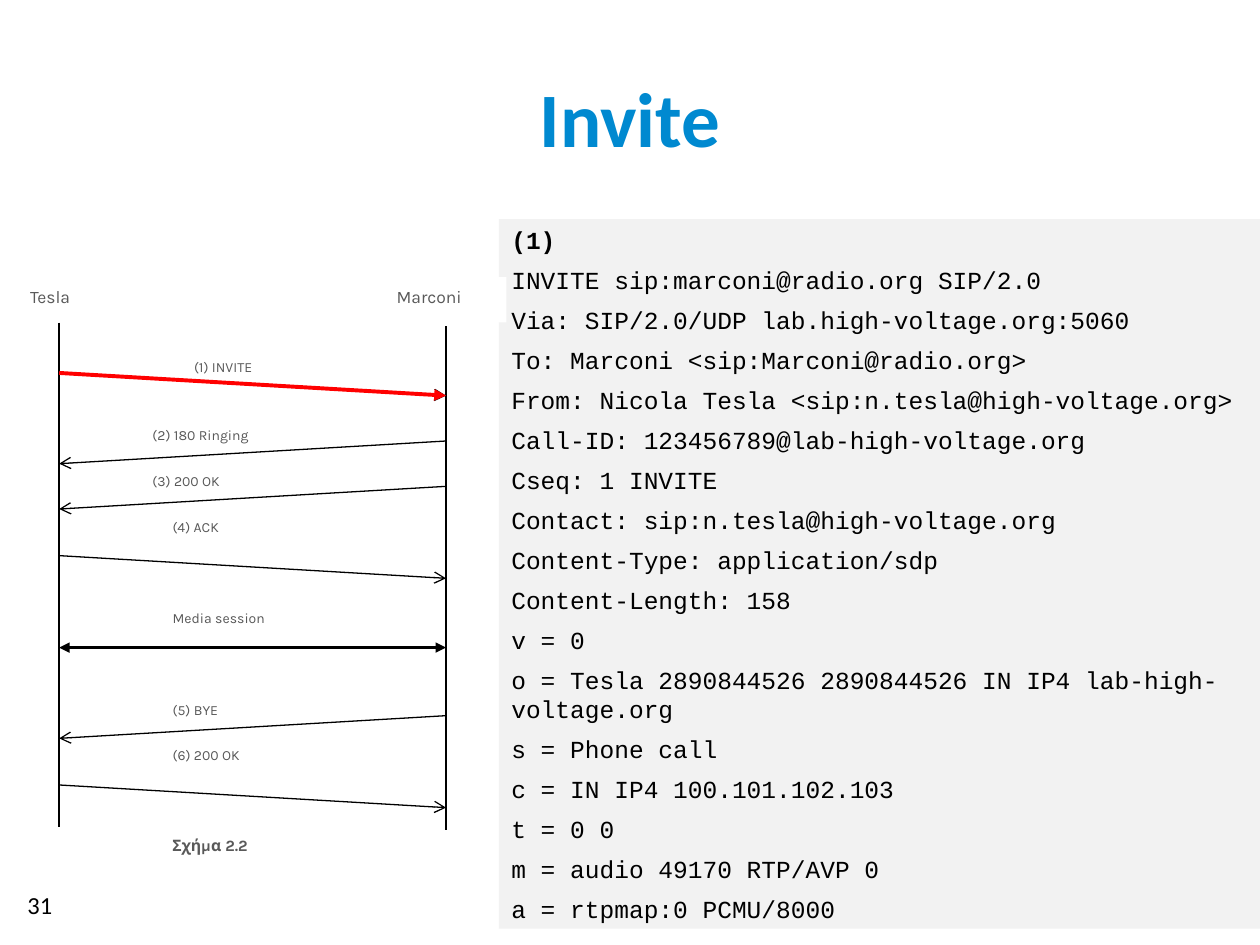
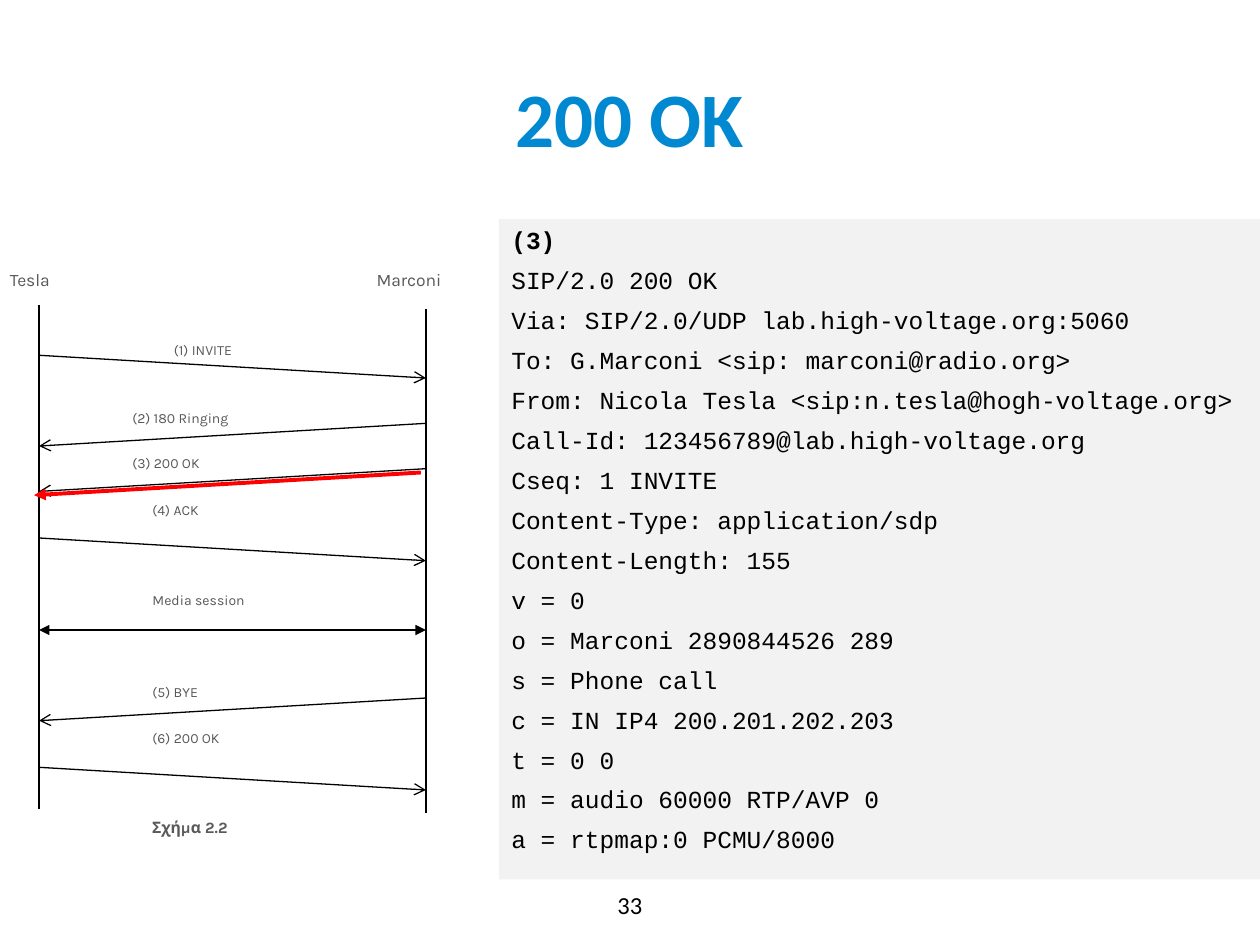
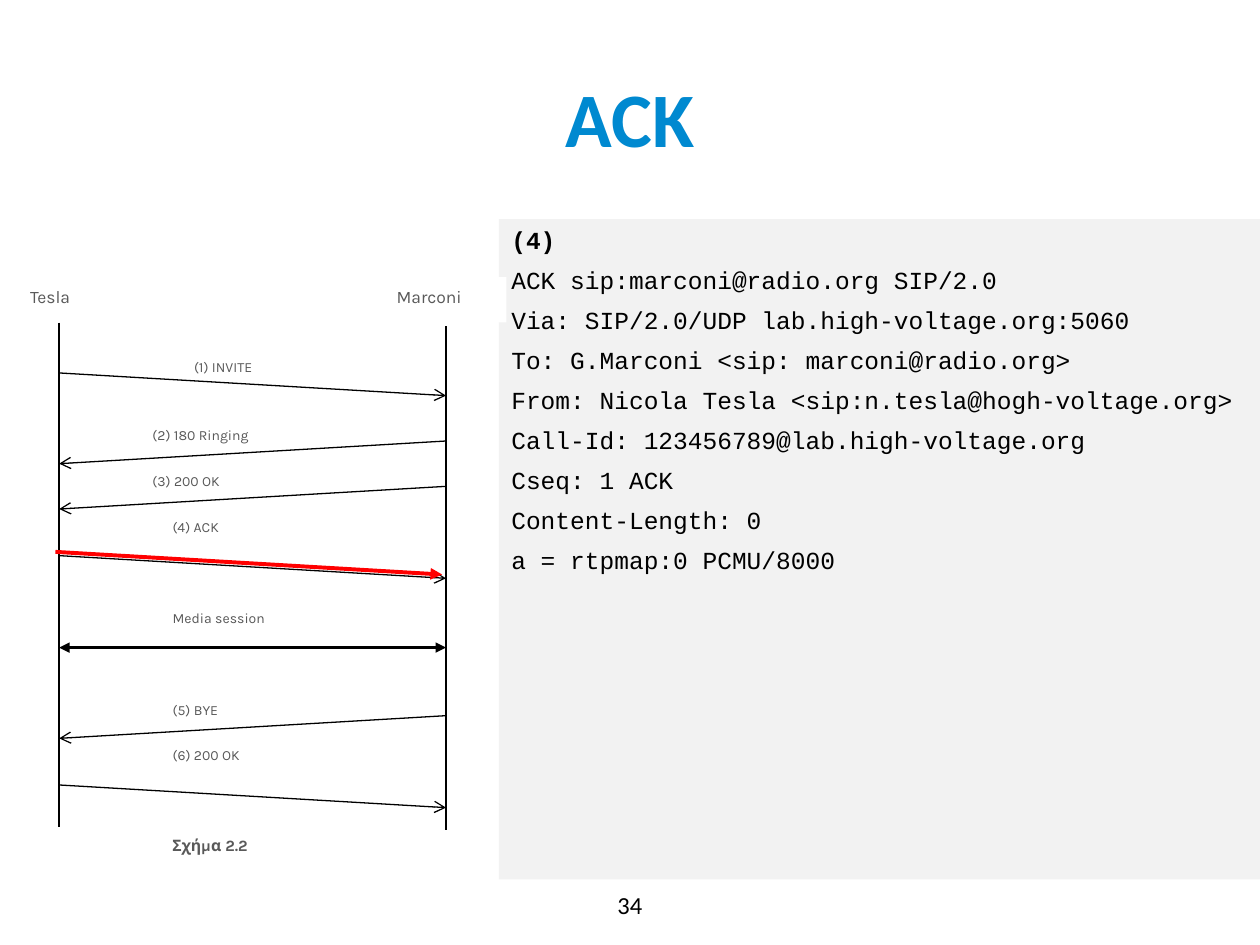
from pptx import Presentation
from pptx.dml.color import RGBColor
from pptx.enum import shapes, text
from pptx.oxml import parse_xml
from pptx.oxml.ns import nsdecls
from pptx.util import Inches, Pt

HUES = {"title": "0089D0", "panel": "F2F2F2", "white": "FFFFFF",
        "ink": "000000", "label": "595959", "hot": "FF0000"}
LEFT, MID = text.PP_ALIGN.LEFT, text.PP_ALIGN.CENTER
TOP, HALF = text.MSO_ANCHOR.TOP, text.MSO_ANCHOR.MIDDLE

PAGES = [
    {"title": "Invite", "page": "31", "align": LEFT, "tall": 5.63,
     "shift": (0, 0), "hot": (0, 0, 0), "lines": [
         "(1)",
         "INVITE sip:marconi@radio.org SIP/2.0",
         "Via: SIP/2.0/UDP lab.high-voltage.org:5060",
         "To: Marconi <sip:Marconi@radio.org>",
         "From: Nicola Tesla <sip:n.tesla@high-voltage.org>",
         "Call-ID: 123456789@lab-high-voltage.org",
         "Cseq: 1 INVITE",
         "Contact: sip:n.tesla@high-voltage.org",
         "Content-Type: application/sdp",
         "Content-Length: 158",
         "v = 0",
         "o = Τesla 2890844526 2890844526 IN IP4 lab-high-voltage.org",
         "s = Phone call",
         "c = IN IP4 100.101.102.103",
         "t = 0 0",
         "m = audio 49170 RTP/AVP 0",
         "a = rtpmap:0 PCMU/8000"]},
    {"title": "200 OK", "page": "33", "align": MID, "tall": 5.24,
     "shift": (-0.16, -0.14), "hot": (2, -0.04, 0.03), "lines": [
         "(3)",
         "SIP/2.0 200 ΟΚ",
         "Via: SIP/2.0/UDP lab.high-voltage.org:5060",
         "To: G.Marconi <sip: marconi@radio.org>",
         "From: Nicola Tesla <sip:n.tesla@hogh-voltage.org>",
         "Call-Id: 123456789@lab.high-voltage.org",
         "Cseq: 1 INVITE",
         "Content-Type: application/sdp",
         "Content-Length: 155",
         "v = 0",
         "o = Marconi 2890844526 289",
         "s = Phone call",
         "c = IN IP4 200.201.202.203",
         "t = 0 0",
         "m = audio 60000 RTP/AVP 0",
         "a = rtpmap:0 PCMU/8000"]},
    {"title": "ACK", "page": "34", "align": MID, "tall": 5.24,
     "shift": (0, 0), "hot": (3, -0.03, -0.03), "lines": [
         "(4)",
         "ACK sip:marconi@radio.org SIP/2.0",
         "Via: SIP/2.0/UDP lab.high-voltage.org:5060",
         "To: G.Marconi <sip: marconi@radio.org>",
         "From: Nicola Tesla <sip:n.tesla@hogh-voltage.org>",
         "Call-Id: 123456789@lab.high-voltage.org",
         "Cseq: 1 ACK",
         "Content-Length: 0",
         "a = rtpmap:0 PCMU/8000"]},
]

NAMES = [("Tesla", 0.14, 0.81), ("Marconi", 3.05, 0.97)]
LABELS = [("(6) 200 OK", 1.11, 5.86, 1.62), ("(5) BYE", 1.11, 5.5, 1.62),
          ("Media session", 1.11, 4.77, 1.62), ("(4) ACK", 1.11, 4.05, 1.13),
          ("(3) 200 OK", 0.95, 3.68, 1.62), ("(2) 180 Ringing", 0.95, 3.32, 1.62),
          ("(1) INVITE", 1.28, 2.78, 1.62)]
CALLER, CALLEE, DROP, ROW = 0.47, 3.54, 0.18, 0.36
STEPS = [(2.96, True), (3.5, False), (3.86, False),
         (4.41, True), (5.68, False), (6.23, True)]

FONTS = {
    "title": {"name": "Calibri", "size": Pt(44), "bold": True},
    "code": {"name": "Courier New", "size": Pt(14), "bold": False},
    "page": {"name": "Calibri", "size": Pt(14)},
    "name": {"name": "Karla", "size": Pt(10)},
    "label": {"name": "Karla", "size": Pt(8)},
    "figure": {"name": "Karla", "size": Pt(9), "bold": True},
}
LABEL = {"line_spacing": 1.15, "space_after": Pt(10), "alignment": LEFT}
CODE = {"line_spacing": 1.0, "space_after": Pt(6), "alignment": LEFT}


def rgb(hue):
    return RGBColor.from_string(HUES[hue])


def put(obj, vals):
    for key, val in vals.items():
        setattr(obj, key, val)


def place(obj, *box):
    put(obj, dict(zip(("left", "top", "width", "height"), map(Inches, box))))


def write(shape, lines, font, hue, para, anchor=TOP):
    frame = shape.text_frame
    put(frame, {"word_wrap": True, "vertical_anchor": anchor})
    for i, line in enumerate(lines):
        p = frame.add_paragraph() if i else frame.paragraphs[0]
        put(p, para)
        run = p.add_run()
        run.text = line
        put(run.font, FONTS[font])
        run.font.color.rgb = rgb(hue)


def block(slide, box, hue):
    shape = slide.shapes.add_shape(shapes.MSO_SHAPE.RECTANGLE, *map(Inches, box))
    shape.shadow.inherit = False
    shape.fill.solid()
    shape.fill.fore_color.rgb = rgb(hue)
    shape.line.fill.background()
    return shape


def line(slide, ends, wide, hue="ink", **tips):
    wire = slide.shapes.add_connector(shapes.MSO_CONNECTOR.STRAIGHT, *map(Inches, ends))
    wire.line.width = Pt(wide)
    wire.line.color.rgb = rgb(hue)
    for end, kind in tips.items():
        wire.line._ln.append(parse_xml(f'<a:{end}End {nsdecls("a")} type="{kind}"/>'))
    wire._element.spPr.append(parse_xml(f'<a:effectLst {nsdecls("a")}/>'))


def arrow(slide, step, dx, dy, *style, tail="arrow"):
    y, right = STEPS[step]
    start, end = (CALLER, CALLEE) if right else (CALLEE, CALLER)
    line(slide, (start + dx, y + dy, end + dx, y + dy + DROP), *style, tail=tail)


def flow(slide, dx, dy):
    def tag(words, x, y, wide, font, indent=0):
        shape = block(slide, (x + dx, y + dy, wide, ROW), "white")
        write(shape, [words], font, "label", LABEL)
        if indent:
            shape.text_frame.margin_left = Inches(0.1 + indent)

    for words, x, wide in NAMES:
        tag(words, x, 2.2, wide, "name")
    for words, x, y, wide in LABELS:
        tag(words, x, y, wide, "label", 0.16)
    for x, y in ((CALLER, 2.56), (CALLEE, 2.59)):
        line(slide, (x + dx, y + dy, x + dx, y + dy + 4), 1.5)
    for step in range(len(STEPS)):
        arrow(slide, step, dx, dy, 0.75)
    line(slide, (CALLER + dx, 5.14 + dy, CALLEE + dx, 5.14 + dy), 1.5,
         head="triangle", tail="triangle")
    for _, x, _ in NAMES:
        block(slide, (x + dx, 1.47 + dy, 0.81, 0.73), "white")
    tag("Σχήμα 2.2", 1.27, 6.56, 1.13, "figure")


def build(deck, page):
    slide = deck.slides.add_slide(deck.slide_layouts[5])
    title = slide.shapes.title
    place(title, 0.5, 0.3, 9, 1.25)
    write(title, [page["title"]], "title", "title", {"alignment": MID}, HALF)
    panel = block(slide, (3.96, 1.74, 6.28, page["tall"]), "panel")
    write(panel, page["lines"], "code", "ink", CODE)
    panel.text_frame.paragraphs[0].runs[0].font.bold = True
    foot = slide.shapes.add_textbox(*map(Inches, (0.12, 6.98, 9.76, 0.4)))
    write(foot, [page["page"]], "page", "ink", {"alignment": page["align"]}, HALF)
    dx, dy = page["shift"]
    flow(slide, dx, dy)
    step, x, y = page["hot"]
    arrow(slide, step, dx + x, dy + y, 2.25, "hot", tail="triangle")


def main():
    deck = Presentation()
    put(deck, {"slide_width": Inches(10), "slide_height": Inches(7.5)})
    for page in PAGES:
        build(deck, page)
    deck.save("out.pptx")


if __name__ == "__main__":
    main()
